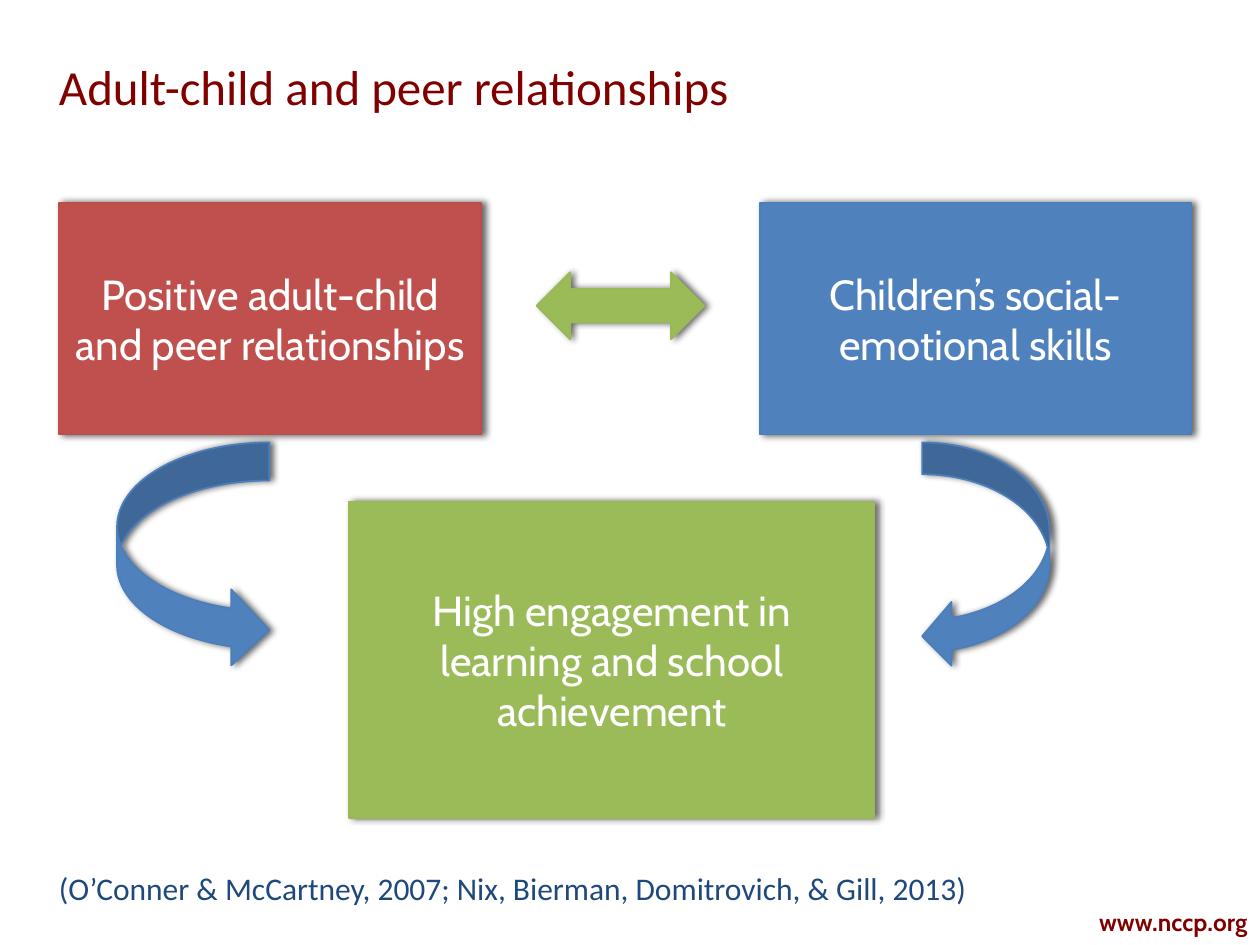
from dataclasses import dataclass

from lxml.etree import SubElement
from pptx import Presentation
from pptx.dml.color import RGBColor
from pptx.enum.shapes import MSO_SHAPE
from pptx.enum.text import MSO_ANCHOR, PP_ALIGN
from pptx.oxml.ns import qn
from pptx.util import Cm, Pt


@dataclass(frozen=True)
class Theme:
    maroon: str = "800000"
    navy: str = "1F497D"
    white: str = "FFFFFF"
    # Each pair is fill and outline
    red: tuple = ("C0504D", "BF4C48")
    blue: tuple = ("4F81BD", "4B7EBC")
    green: tuple = ("9BBB59", "98B955")
    heading_font: str = "Calibri"
    body_font: str = "Cabin"
    title_size: int = 28
    box_size: int = 24
    citation_size: int = 18
    footer_size: int = 14


theme = Theme()


def write(shape, text, font, size, color, align, anchor, bold=False, spacing=None):
    frame = shape.text_frame
    frame.word_wrap = True
    frame.vertical_anchor = anchor
    para = frame.paragraphs[0]
    para.alignment = align
    if spacing:
        para.line_spacing = Pt(spacing)
    span = para.add_run()
    span.text = text
    span.font.name = font
    span.font.size = Pt(size)
    span.font.bold = bold
    span.font.color.rgb = RGBColor.from_string(color)


def add_shadowed(kind, place, colors):
    shape = slide.shapes.add_shape(kind, *map(Cm, place))
    fill, outline = colors
    shape.fill.solid()
    shape.fill.fore_color.rgb = RGBColor.from_string(fill)
    shape.line.color.rgb = RGBColor.from_string(outline)
    shape.line.width = Pt(1)
    # Turning inheritance off leaves an empty effect list to hold the shadow
    shape.shadow.inherit = False
    effects = shape.element.spPr.find(qn("a:effectLst"))
    shadow = SubElement(effects, qn("a:outerShdw"), blurRad=str(Pt(4)),
                        dist=str(Pt(2)), dir="0", rotWithShape="0")
    black = SubElement(shadow, qn("a:srgbClr"), val="000000")
    SubElement(black, qn("a:alpha"), val="60000")
    return shape


deck = Presentation()
deck.slide_width, deck.slide_height = Cm(25.4), Cm(19.05)
slide = deck.slides.add_slide(deck.slide_layouts[6])

# Footer, title and citation
footer = slide.shapes.add_textbox(Cm(21.16), Cm(18.34), Cm(4.24), Cm(0.69))
write(footer, "www.nccp.org", theme.body_font, theme.footer_size, theme.maroon,
      PP_ALIGN.RIGHT, MSO_ANCHOR.MIDDLE, bold=True, spacing=10.8)

title = slide.shapes.add_textbox(Cm(0.94), Cm(-0.05), Cm(21.72), Cm(2.51))
write(title, "Adult-child and peer relationships", theme.heading_font,
      theme.title_size, theme.maroon, PP_ALIGN.LEFT, MSO_ANCHOR.BOTTOM, spacing=43)

citation = slide.shapes.add_textbox(Cm(0.94), Cm(17.4), Cm(23.52), Cm(1.02))
write(citation, "(O’Conner & McCartney, 2007; Nix, Bierman, Domitrovich, & Gill, 2013)",
      theme.heading_font, theme.citation_size, theme.navy,
      PP_ALIGN.LEFT, MSO_ANCHOR.TOP)

# Two linked factors above their shared outcome
for text, place, colors in (
    ("Positive adult-child and peer relationships", (1.19, 4.09, 8.51, 4.67), theme.red),
    ("Children’s social-emotional skills", (15.32, 4.09, 8.69, 4.67), theme.blue),
    ("High engagement in learning and school achievement",
     (7.04, 10.11, 10.59, 6.38), theme.green),
):
    box = add_shadowed(MSO_SHAPE.RECTANGLE, place, colors)
    write(box, text, theme.body_font, theme.box_size, theme.white,
          PP_ALIGN.CENTER, MSO_ANCHOR.MIDDLE)

# Arrows between the boxes
add_shadowed(MSO_SHAPE.LEFT_RIGHT_ARROW, (10.82, 5.49, 3.38, 1.35), theme.green)
add_shadowed(MSO_SHAPE.CURVED_RIGHT_ARROW, (2.36, 8.92, 3.07, 4.55), theme.blue)
skills_arrow = add_shadowed(MSO_SHAPE.CURVED_LEFT_ARROW, (18.59, 8.92, 2.57, 4.55), theme.blue)
skills_arrow.adjustments[2] = 0.23

deck.save("out.pptx")
